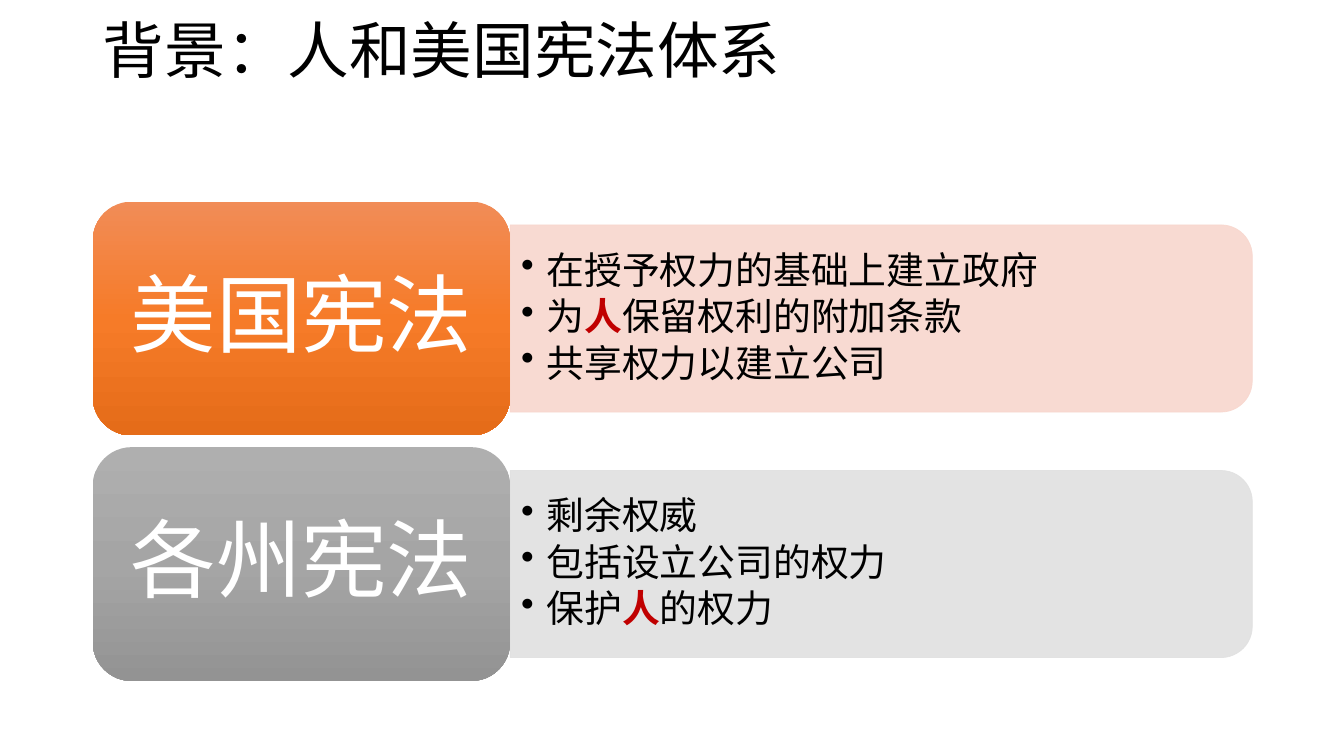
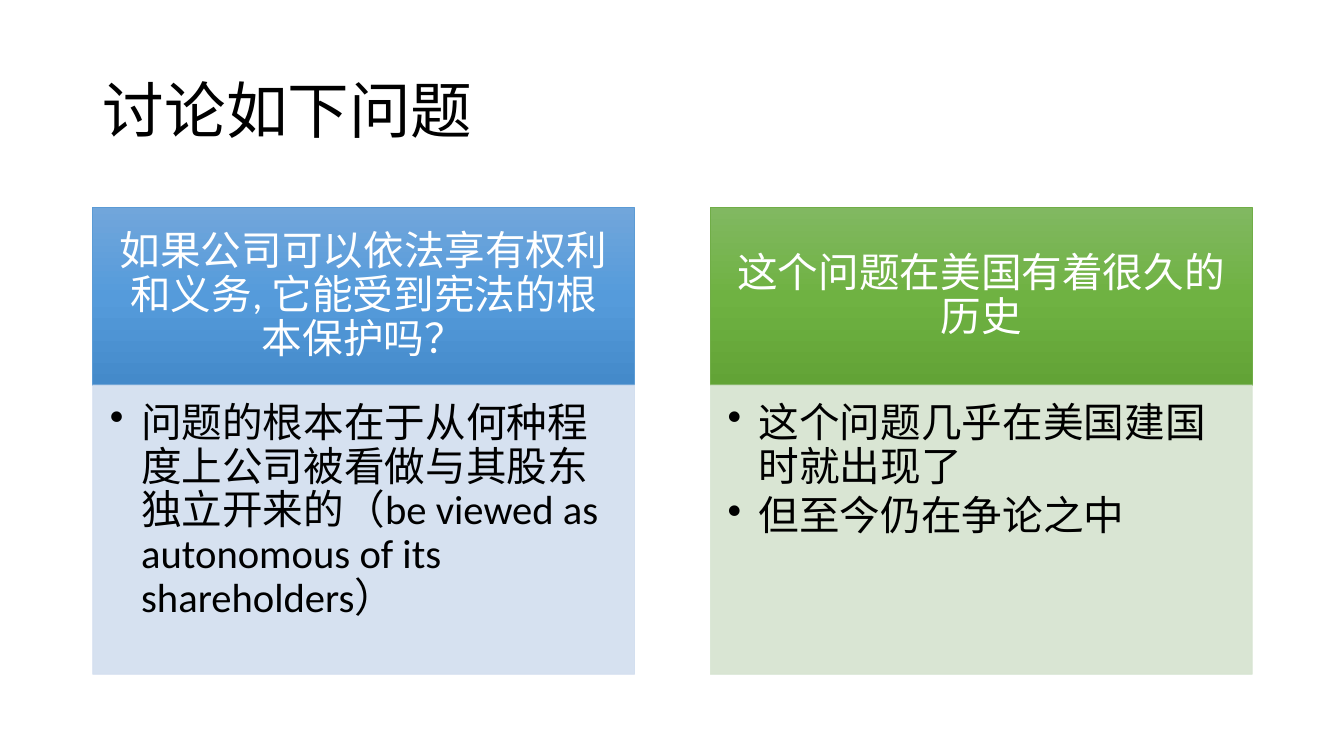
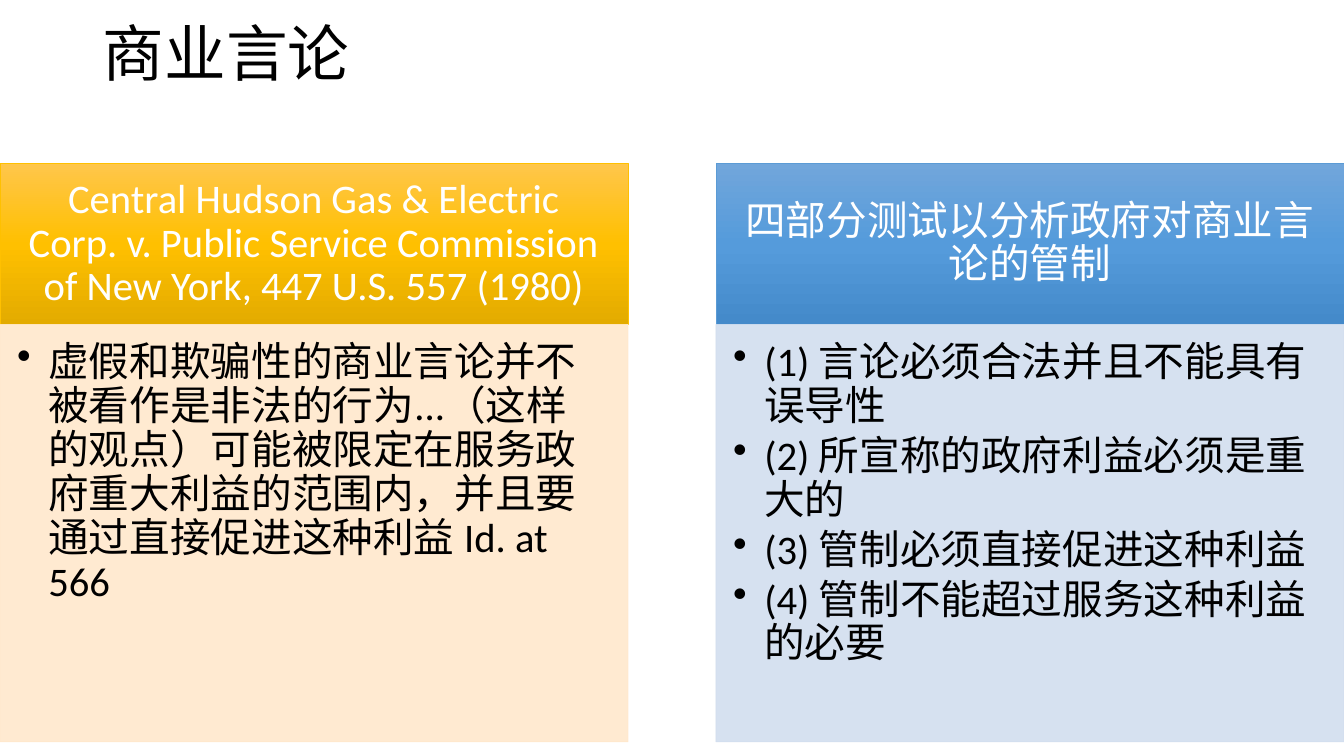
from copy import deepcopy
from dataclasses import dataclass
from typing import Optional

from lxml.etree import SubElement
from pptx import Presentation
from pptx.dml.color import RGBColor
from pptx.enum.lang import MSO_LANGUAGE_ID as Language
from pptx.enum.shapes import MSO_SHAPE as Preset
from pptx.enum.text import MSO_ANCHOR as Anchor, MSO_AUTO_SIZE as AutoSize, PP_ALIGN as Align
from pptx.oxml.ns import qn
from pptx.util import Inches, Pt

SLIDE_WIDTH, SLIDE_HEIGHT = 13.33, 7.5
MARGIN = 0.92
CONTENT_WIDTH = 11.5
FONT = "Calibri"
TITLE_SIZE = 44

COLORS = {
    "text": "000000",
    "reverse": "FFFFFF",
    "emphasis": "C00000",
    "orange tint": "F8D7CE",
    "gray tint": "E1E1E1",
    "blue tint": "D2DEEF",
    "green tint": "D5E3CF",
    "gold tint": "FFE8CC",
    "blue edge": "5B9BD5",
    "green edge": "70AD47",
    "gold edge": "FFC000",
}
GRADIENTS = {
    "orange": ("F18C57", "F67B28", "E56C19"),
    "gray": ("AFAFAF", "A5A5A5", "939393"),
    "blue": ("71A6DB", "559BDB", "448ACA"),
    "green": ("81B861", "6FB242", "62A336"),
    "gold": ("FFC64B", "FFC000", "E3AB00"),
}


@dataclass(frozen=True)
class Box:
    left: float
    top: float
    width: float
    height: float

    def inches(self) -> tuple:
        return tuple(Inches(n) for n in (self.left, self.top, self.width, self.height))


@dataclass(frozen=True)
class Topic:
    """A coloured heading with its points; *stars* mark emphasised words."""
    color: str
    heading: str
    points: tuple


@dataclass(frozen=True)
class ColumnArea:
    """The place of two columns, with the heights of their two parts."""
    left: float
    top: float
    width: float
    heading_height: float
    body_height: float


def rgb(name: str) -> RGBColor:
    return RGBColor.from_string(COLORS[name])


def write(shape, text, *, size: float, color: str = "text", align=Align.LEFT,
          anchor=Anchor.MIDDLE, margins: tuple = (0.1, 0.05, 0.1, 0.05),
          space_after: float = 0, bullet_indent: Optional[float] = None) -> None:
    """Fill a shape with one paragraph for each string in text."""
    frame = shape.text_frame
    frame.word_wrap = True
    frame.auto_size = AutoSize.NONE
    frame.vertical_anchor = anchor
    (frame.margin_left, frame.margin_top,
     frame.margin_right, frame.margin_bottom) = (Inches(m) for m in margins)
    lines = (text,) if isinstance(text, str) else text
    for index, line in enumerate(lines):
        paragraph = frame.add_paragraph() if index else frame.paragraphs[0]
        paragraph.alignment = align
        paragraph.line_spacing = 0.9
        paragraph.space_before = Pt(0)
        paragraph.space_after = Pt(round(size * space_after, 1))
        if bullet_indent is not None:
            paragraph.level = 1
            properties = paragraph._p.get_or_add_pPr()
            properties.set("marL", str(Inches(bullet_indent)))
            properties.set("indent", str(-Inches(bullet_indent)))
            SubElement(properties, qn("a:buChar")).set("char", "•")
        for part, words in enumerate(line.split("*")):
            run = paragraph.add_run()
            run.text = words
            run.font.name = FONT
            run.font.size = Pt(size)
            run.font.bold = part % 2 == 1
            run.font.color.rgb = rgb("emphasis" if part % 2 else color)
            run.font.language_id = Language.SIMPLIFIED_CHINESE


def add_gradient_shape(slide, preset, box: Box, color: str, outlined: bool):
    shape = slide.shapes.add_shape(preset, *box.inches())
    shape.shadow.inherit = False
    shape.fill.gradient()
    shape.fill.gradient_angle = 270
    stop_list = shape.element.spPr.find(".//" + qn("a:gsLst"))
    stop_list.insert(1, deepcopy(stop_list[0]))
    for index, (stop, value) in enumerate(zip(shape.fill.gradient_stops, GRADIENTS[color])):
        stop.color.rgb = RGBColor.from_string(value)
        stop.position = index / 2
    if outlined:
        shape.line.color.rgb = rgb(f"{color} edge")
        shape.line.width = Pt(0.5)
    else:
        shape.line.fill.background()
    return shape


def add_tint_shape(slide, preset, box: Box, color: str):
    """Add a pale panel whose fill and outline are 90% opaque."""
    shape = slide.shapes.add_shape(preset, *box.inches())
    shape.shadow.inherit = False
    shape.fill.solid()
    shape.fill.fore_color.rgb = rgb(f"{color} tint")
    shape.line.color.rgb = rgb(f"{color} tint")
    shape.line.width = Pt(0.5)
    for value in shape.element.spPr.findall(".//" + qn("a:srgbClr")):
        SubElement(value, qn("a:alpha")).set("val", "90000")
    return shape


def add_titled_slide(presentation, title: str, top: float, height: float):
    slide = presentation.slides.add_slide(presentation.slide_layouts[5])
    placeholder = slide.shapes.title
    (placeholder.left, placeholder.top,
     placeholder.width, placeholder.height) = Box(MARGIN, top, CONTENT_WIDTH, height).inches()
    write(placeholder, title, size=TITLE_SIZE)
    return slide


def add_topic_rows(slide, topics: tuple, top: float, height: float) -> None:
    """Stack topics, each a label at the left and its points at the right."""
    label_width = 0.36 * CONTENT_WIDTH
    panel_left = MARGIN + label_width
    panel_width, panel_height = CONTENT_WIDTH - label_width, 0.8 * height
    for row, topic in enumerate(topics):
        row_top = top + row * 1.05 * height
        middle = row_top + height / 2
        # The panel is upright before its quarter turn, so its sides swap.
        upright = Box(panel_left + (panel_width - panel_height) / 2,
                      middle - panel_width / 2, panel_height, panel_width)
        panel = add_tint_shape(slide, Preset.ROUND_2_SAME_RECTANGLE, upright, topic.color)
        panel.rotation = 90
        text_height = 0.9 * panel_height
        points = slide.shapes.add_textbox(
            *Box(panel_left, middle - text_height / 2, panel_width - 0.09, text_height).inches())
        write(points, topic.points, size=27, margins=(0.11, 0.06, 0.11, 0.06),
              space_after=0.15, bullet_indent=0.25)
        label = add_gradient_shape(slide, Preset.ROUNDED_RECTANGLE,
                                   Box(MARGIN, row_top, label_width, height),
                                   topic.color, outlined=False)
        write(label, topic.heading, size=61, color="reverse", align=Align.CENTER,
              margins=(0.2, 0.13, 0.2, 0.13), space_after=0.35)


def add_topic_columns(slide, topics: tuple, area: ColumnArea) -> None:
    """Set topics side by side, with gaps of 14% of a column."""
    width = area.width / (len(topics) + 0.14 * (len(topics) - 1))
    for column, topic in enumerate(topics):
        left = area.left + column * 1.14 * width
        heading = add_gradient_shape(slide, Preset.RECTANGLE,
                                     Box(left, area.top, width, area.heading_height),
                                     topic.color, outlined=True)
        write(heading, topic.heading, size=29, color="reverse", align=Align.CENTER,
              margins=(0.23, 0.13, 0.23, 0.13), space_after=0.35)
        body = add_tint_shape(slide, Preset.RECTANGLE,
                              Box(left, area.top + area.heading_height, width, area.body_height),
                              topic.color)
        write(body, topic.points, size=29, anchor=Anchor.TOP,
              margins=(0.17, 0.17, 0.23, 0.25), space_after=0.15, bullet_indent=0.31)


CONSTITUTIONS = (
    Topic("orange", "美国宪法",
          ("在授予权力的基础上建立政府", "为*人*保留权利的附加条款", "共享权力以建立公司")),
    Topic("gray", "各州宪法",
          ("剩余权威", "包括设立公司的权力", "保护*人*的权力")),
)
QUESTIONS = (
    Topic("blue", "如果公司可以依法享有权利和义务, 它能受到宪法的根本保护吗？",
          ("问题的根本在于从何种程度上公司被看做与其股东独立开来的"
           "（be viewed as autonomous of its shareholders）",)),
    Topic("green", "这个问题在美国有着很久的历史",
          ("这个问题几乎在美国建国时就出现了", "但至今仍在争论之中")),
)
COMMERCIAL_SPEECH = (
    Topic("gold",
          "Central Hudson Gas & Electric Corp. v. Public Service Commission "
          "of New York, 447 U.S. 557 (1980)",
          ("虚假和欺骗性的商业言论并不被看作是非法的行为...（这样的观点）"
           "可能被限定在服务政府重大利益的范围内，并且要通过直接促进这种利益 Id. at 566",)),
    Topic("blue", "四部分测试以分析政府对商业言论的管制",
          ("(1) 言论必须合法并且不能具有误导性", "(2) 所宣称的政府利益必须是重大的",
           "(3) 管制必须直接促进这种利益", "(4) 管制不能超过服务这种利益的必要")),
)


def main() -> None:
    presentation = Presentation()
    presentation.slide_width = Inches(SLIDE_WIDTH)
    presentation.slide_height = Inches(SLIDE_HEIGHT)

    slide = add_titled_slide(presentation, "背景：人和美国宪法体系", 0, 1.07)
    add_topic_rows(slide, CONSTITUTIONS, top=2, height=2.32)

    slide = add_titled_slide(presentation, "讨论如下问题", 0.4, 1.45)
    add_topic_columns(slide, QUESTIONS, ColumnArea(MARGIN, 2.06, CONTENT_WIDTH, 1.76, 2.87))

    slide = add_titled_slide(presentation, "商业言论", 0, 1.12)
    add_topic_columns(slide, COMMERCIAL_SPEECH, ColumnArea(0, 1.62, SLIDE_WIDTH, 1.6, 4.14))

    presentation.save("out.pptx")


if __name__ == "__main__":
    main()
